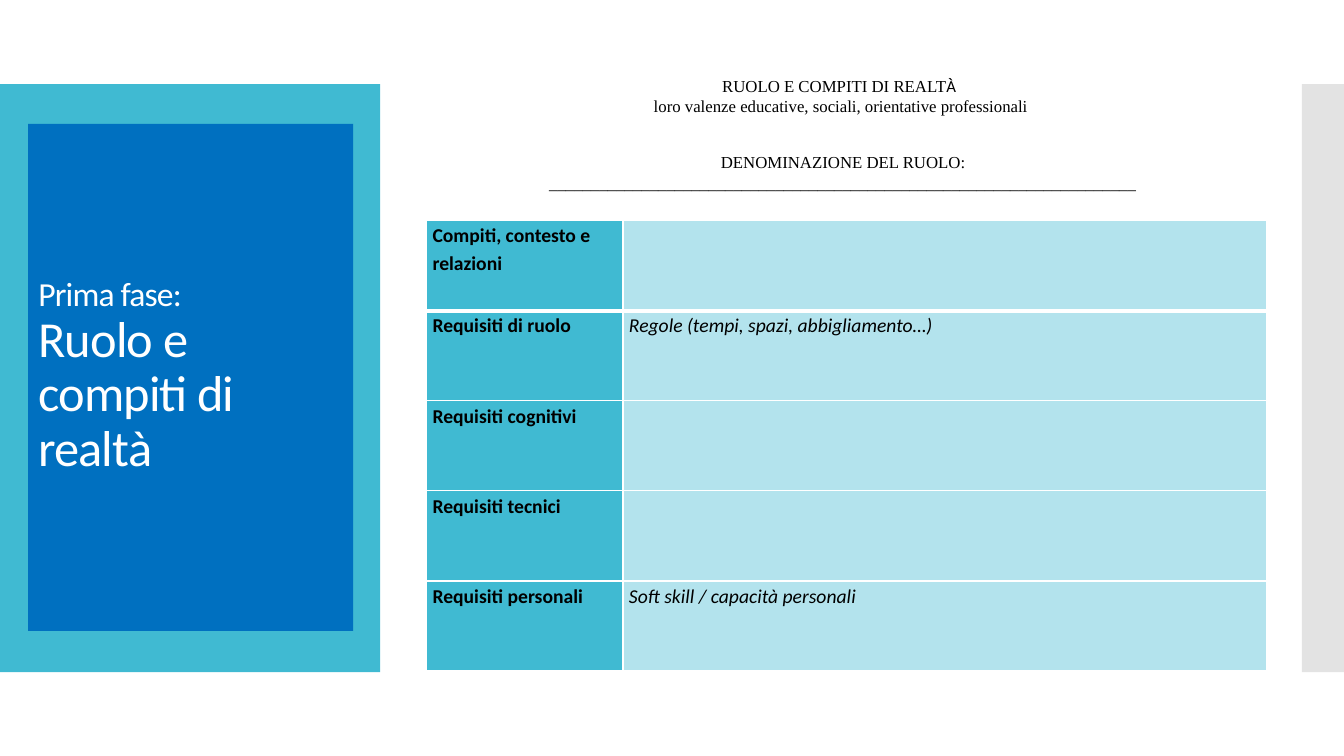
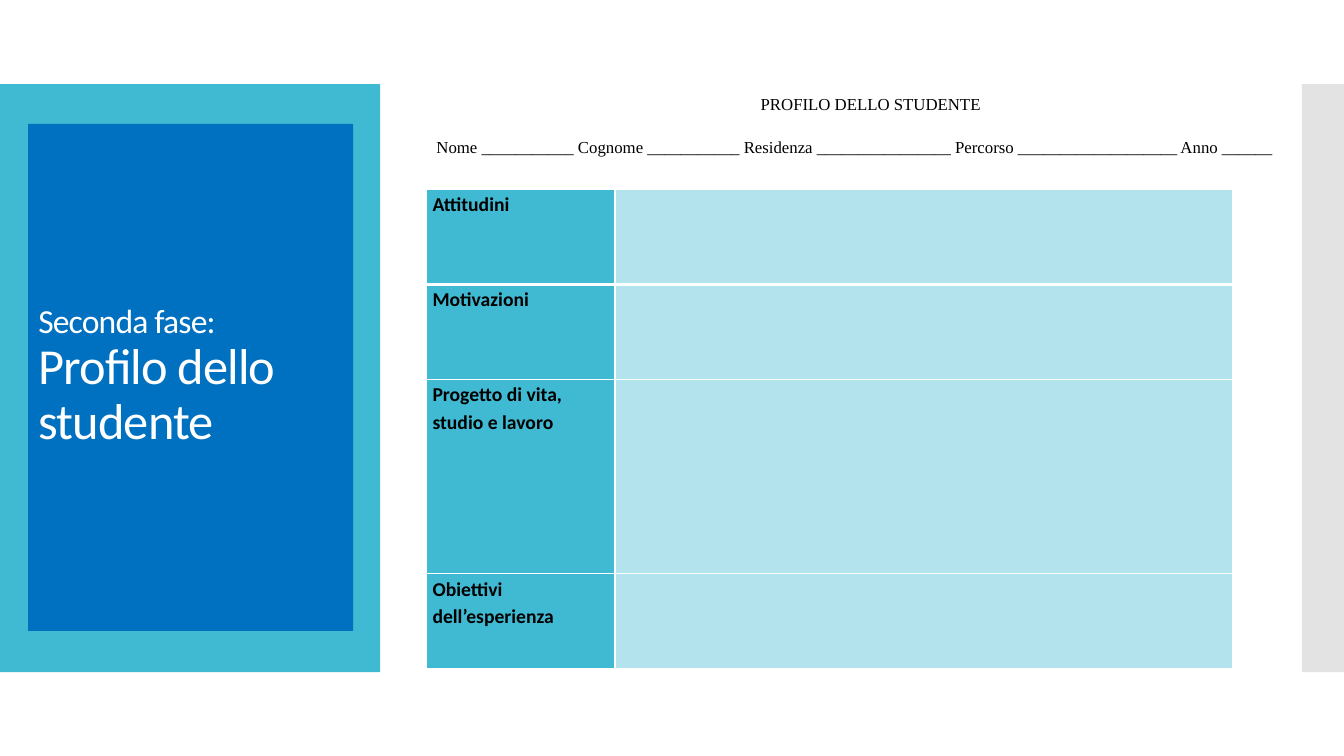
from copy import deepcopy

from lxml.etree import SubElement
from pptx import Presentation
from pptx.dml.color import RGBColor
from pptx.enum.shapes import MSO_SHAPE
from pptx.enum.text import MSO_ANCHOR, MSO_AUTO_SIZE, PP_ALIGN
from pptx.oxml.ns import qn
from pptx.util import Cm, Pt

TEAL = RGBColor(0x40, 0xBA, 0xD2)
PALE = RGBColor(0xB3, 0xE3, 0xED)
BLUE = RGBColor(0x00, 0x70, 0xC0)
GREY = RGBColor(0xC8, 0xC8, 0xC8)
WHITE = RGBColor(0xFF, 0xFF, 0xFF)
BLACK = RGBColor(0x00, 0x00, 0x00)
SANS, SERIF = "Calibri", "Times New Roman"
WIDE, HIGH = 33.87, 19.05


class Deck:
    """Holds the style and the current slide."""

    def __init__(self):
        self.prs = Presentation()
        self.prs.slide_width, self.prs.slide_height = Cm(WIDE), Cm(HIGH)
        self.layout = self.prs.slide_layouts.get_by_name("Title Only")
        self.slide = None

    def start(self):
        first = self.slide is None
        self.slide = self.prs.slides.add_slide(self.layout)
        if first:
            self.band(0, 9.58, TEAL)
            self.band(WIDE - 1.06, 1.06, GREY, 50)

    def band(self, left, width, color, alpha=100):
        """Draw a side band and hand it to the shared layout."""
        box = self.slide.shapes.add_shape(
            MSO_SHAPE.RECTANGLE, Cm(left), Cm(2.12), Cm(width), Cm(14.82))
        box.shadow.inherit = False
        box.fill.solid()
        box.fill.fore_color.rgb = color
        box.line.fill.background()
        if alpha < 100:
            tint = next(box.element.iter(qn("a:srgbClr")))
            SubElement(tint, qn("a:alpha")).set("val", str(alpha * 1000))
        self.layout.shapes.element.insert(2, box.element)

    def run(self, para, text, size, face=SANS, color=BLACK, bold=False, slant=False):
        run = para.add_run()
        run.text = text
        font = run.font
        font.size, font.name, font.color.rgb = Pt(size), face, color
        font.bold, font.italic = bold, slant
        return run

    def title(self, phase, topic):
        box = self.slide.shapes.title
        box.left, box.top, box.width, box.height = Cm(0.71), Cm(3.12), Cm(8.19), Cm(12.78)
        box.fill.solid()
        box.fill.fore_color.rgb = BLUE
        frame = box.text_frame
        frame.word_wrap, frame.auto_size = True, MSO_AUTO_SIZE.NONE
        frame.vertical_anchor = MSO_ANCHOR.MIDDLE
        para = frame.paragraphs[0]
        para.alignment, para.line_spacing = PP_ALIGN.LEFT, 0.9
        lead = self.run(para, phase, 24, color=WHITE)
        para.add_line_break()
        main = self.run(para, topic, 36, color=WHITE)
        for run in (lead, main):
            run.font._element.set("spc", "-60")
        # The break keeps the size of the first line
        para._p.find(qn("a:br")).append(deepcopy(lead.font._element))

    def text(self, left, top, width, height, lines, align=PP_ALIGN.LEFT, wrap=True):
        """Each line is a list of (text, font) pairs."""
        box = self.slide.shapes.add_textbox(Cm(left), Cm(top), Cm(width), Cm(height))
        frame = box.text_frame
        frame.word_wrap, frame.auto_size = wrap, MSO_AUTO_SIZE.SHAPE_TO_FIT_TEXT
        for i, line in enumerate(lines):
            para = frame.add_paragraph() if i else frame.paragraphs[0]
            para.alignment = align
            for words, face in line:
                self.run(para, words, 12, face)

    def edge(self, cell, top, bottom):
        props = cell._tc.get_or_add_tcPr()
        for side, width in (("L", 1), ("R", 1), ("T", top), ("B", bottom)):
            line = SubElement(props, qn("a:ln" + side), w=str(Pt(width)))
            fill = SubElement(line, qn("a:solidFill"))
            SubElement(fill, qn("a:srgbClr"), val=str(WHITE))

    def table(self, top, widths, rows):
        """Each row is (height, label, hint)."""
        total = sum(row[0] for row in rows)
        grid = self.slide.shapes.add_table(
            len(rows), 2, Cm(10.75), Cm(top), Cm(sum(widths)), Cm(total)).table
        grid.first_row = grid.horz_banding = False
        for col, width in zip(grid.columns, widths):
            col.width = Cm(width)
        for i, (height, *words) in enumerate(rows):
            grid.rows[i].height = Cm(height)
            for j, word in enumerate(words):
                cell = grid.cell(i, j)
                cell.margin_left = cell.margin_right = Cm(0.15)
                cell.margin_top = cell.margin_bottom = 0
                # Thick rule under the first row
                self.edge(cell, 3 if i == 1 else 1, 3 if i == 0 else 1)
                cell.fill.solid()
                cell.fill.fore_color.rgb = PALE if j else TEAL
                if word:
                    para = cell.text_frame.paragraphs[0]
                    para.line_spacing = 1.15
                    para.alignment = PP_ALIGN.JUSTIFY if j else PP_ALIGN.LEFT
                    self.run(para, word, 14, bold=not j, slant=bool(j))


def main():
    deck = Deck()

    # Role and its tasks
    deck.start()
    deck.title("Prima fase: ", "Ruolo e compiti di realtà")
    tasks = [
        ("Compiti, contesto e relazioni", ""),
        ("Requisiti di ruolo", "Regole (tempi, spazi, abbigliamento…) "),
        ("Requisiti cognitivi", ""),
        ("Requisiti tecnici", ""),
        ("Requisiti personali", "Soft skill / capacità personali "),
    ]
    deck.table(5.56, (4.95, 16.23), [(2.27, *task) for task in tasks])
    deck.text(16, 1.78, 10.39, 1.73, [
        [("RUOLO E COMPITI DI REALT", SERIF), ("À ", SANS)],
        [("loro valenze educative, sociali, orientative professionali", SERIF)],
    ], PP_ALIGN.CENTER, wrap=False)
    deck.text(10.57, 3.71, 21.36, 1.27, [
        [("DENOMINAZIONE DEL RUOLO: " + "_" * 70, SERIF)],
    ], PP_ALIGN.CENTER)

    # Student profile
    deck.start()
    deck.title("Seconda fase:", "Profilo dello studente")
    deck.table(4.78, (4.75, 15.57), [
        (2.39, "Attitudini", ""),
        (2.39, "Motivazioni", ""),
        (4.9, "Progetto di vita, studio e lavoro", ""),
        (2.39, "Obiettivi dell’esperienza", ""),
    ])
    deck.text(18.92, 2.24, 6.22, 0.76, [[("PROFILO DELLO STUDENTE", SERIF)]], wrap=False)
    blanks = (("Nome", 11), ("Cognome", 11), ("Residenza", 16), ("Percorso", 19), ("Anno", 6))
    form = " ".join(f"{name} {'_' * size}" for name, size in blanks)
    deck.text(10.75, 3.33, 21.77, 0.76, [[(form, SERIF)]])

    deck.prs.save("out.pptx")


if __name__ == "__main__":
    main()
